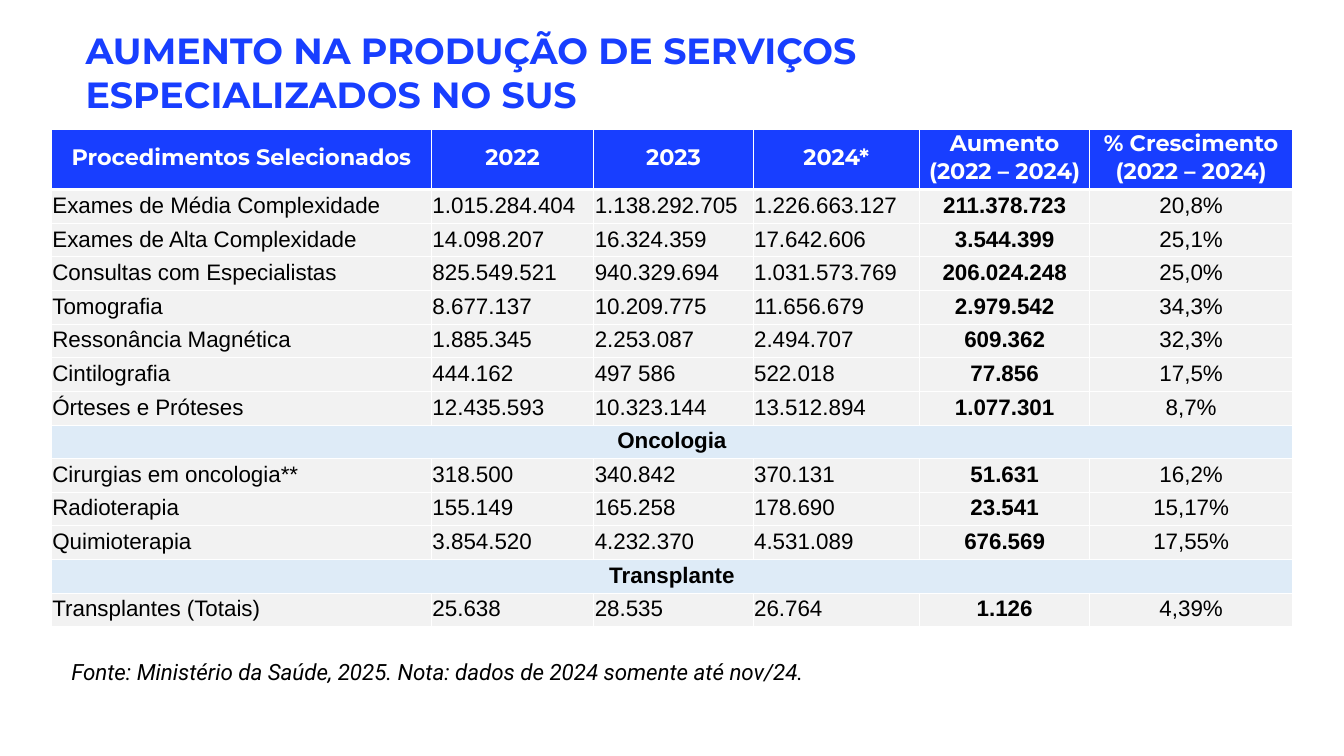
from lxml import etree
from pptx import Presentation
from pptx.dml.color import RGBColor
from pptx.enum.text import MSO_ANCHOR, MSO_AUTO_SIZE, PP_ALIGN
from pptx.oxml.ns import qn
from pptx.util import Pt

LEFT, CENTER = PP_ALIGN.LEFT, PP_ALIGN.CENTER
MIDDLE = MSO_ANCHOR.MIDDLE
GROW = MSO_AUTO_SIZE.SHAPE_TO_FIT_TEXT
NO_FIT = MSO_AUTO_SIZE.NONE

EMU_PER_PX = 9144  # 100 px to the inch
COLORS = {"blue": "183EFF", "row": "F2F2F2", "section": "DEEBF7",
          "white": "FFFFFF", "black": "000000"}

COLUMN_WIDTHS = [377, 161, 158, 165, 169, 201]
HEADER_HEIGHT = 60
INCREASE_COLUMN = 4
HEADER = ["Procedimentos Selecionados", "2022", "2023", "2024*",
          "Aumento\n(2022 – 2024)", "% Crescimento\n(2022 – 2024)"]
# A row with a single entry is a section heading across the table
PROCEDURES = [
    ["Exames de Média Complexidade", "1.015.284.404", "1.138.292.705",
     "1.226.663.127", "211.378.723", "20,8%"],
    ["Exames de Alta Complexidade", "14.098.207", "16.324.359", "17.642.606", "3.544.399", "25,1%"],
    ["Consultas com Especialistas", "825.549.521", "940.329.694",
     "1.031.573.769", "206.024.248", "25,0%"],
    ["Tomografia", "8.677.137", "10.209.775", "11.656.679", "2.979.542", "34,3%"],
    ["Ressonância Magnética", "1.885.345", "2.253.087", "2.494.707", "609.362", "32,3%"],
    ["Cintilografia", "444.162", "497 586", "522.018", "77.856", "17,5%"],
    ["Órteses e Próteses", "12.435.593", "10.323.144", "13.512.894", "1.077.301", "8,7%"],
    ["Oncologia"],
    ["Cirurgias em oncologia**", "318.500", "340.842", "370.131", "51.631", "16,2%"],
    ["Radioterapia", "155.149", "165.258", "178.690", "23.541", "15,17%"],
    ["Quimioterapia", "3.854.520", "4.232.370", "4.531.089", "676.569", "17,55%"],
    ["Transplante"],
    ["Transplantes (Totais)", "25.638", "28.535", "26.764", "1.126", "4,39%"],
]


def px(length):
    return round(length * EMU_PER_PX)


def rgb(name):
    return RGBColor.from_string(COLORS[name])


def set_font(paragraph, family, size, color, bold=False, italic=False):
    font = paragraph.font
    font.name, font.size = family, Pt(size)
    font.bold, font.italic = bold, italic
    font.color.rgb = rgb(color)


def add_text(slide, box, text, auto_size, **font):
    text_frame = slide.shapes.add_textbox(*map(px, box)).text_frame
    text_frame.word_wrap = True
    text_frame.auto_size = auto_size
    text_frame.text = text
    set_font(text_frame.paragraphs[0], **font)


def add_title(slide, box):
    add_text(slide, box, "AUMENTO NA PRODUÇÃO DE SERVIÇOS ESPECIALIZADOS NO SUS", NO_FIT,
             family="Montserrat", size=26, color="blue", bold=True)


def add_source_note(slide, box):
    add_text(slide, box,
             "Fonte: Ministério da Saúde, 2025. Nota: dados de 2024 somente até nov/24.", GROW,
             family="Roboto", size=16, color="black", italic=True)


def set_borders(cell, widths):
    properties = cell._tc.get_or_add_tcPr()
    for side, width in zip("LRTB", widths):
        line = etree.SubElement(properties, qn(f"a:ln{side}"), w=str(Pt(width)))
        fill = etree.SubElement(line, qn("a:solidFill"))
        etree.SubElement(fill, qn("a:srgbClr"), val=COLORS["white"])


def style_cell(cell, text, fill, align, borders, **font):
    set_borders(cell, borders)
    cell.fill.solid()
    cell.fill.fore_color.rgb = rgb(fill)
    cell.vertical_anchor = MIDDLE
    cell.margin_left = cell.margin_right = cell.margin_top = px(1)
    cell.margin_bottom = px(5)
    cell.text = text
    for paragraph in cell.text_frame.paragraphs:
        paragraph.alignment = align
        paragraph.line_spacing = Pt(19.5)
        set_font(paragraph, size=16, **font)


def add_procedures_table(slide, box):
    rows = [HEADER] + PROCEDURES
    table = slide.shapes.add_table(len(rows), len(HEADER), *map(px, box)).table
    table.horz_banding = False
    for column, width in zip(table.columns, COLUMN_WIDTHS):
        column.width = px(width)
    body_height = (box[3] - HEADER_HEIGHT) / len(PROCEDURES)

    for r, entries in enumerate(rows):
        table.rows[r].height = px(body_height if r else HEADER_HEIGHT)
        is_section = len(entries) == 1
        if is_section:
            table.cell(r, 0).merge(table.cell(r, len(HEADER) - 1))
        # The line between header and body is heavier
        borders = (0.75, 0.75, 2.22 if r == 1 else 0.75, 2.22 if r == 0 else 0.75)
        for c, text in enumerate(entries):
            cell = table.cell(r, c)
            if r == 0:
                style_cell(cell, text, "blue", CENTER, borders,
                           family="Montserrat", color="white", bold=True)
            else:
                style_cell(cell, text, "section" if is_section else "row",
                           CENTER if is_section or c >= INCREASE_COLUMN else LEFT, borders,
                           family="Arial", color="black",
                           bold=is_section or c == INCREASE_COLUMN)


def main():
    presentation = Presentation()
    presentation.slide_width, presentation.slide_height = px(1333), px(750)
    slide = presentation.slides.add_slide(presentation.slide_layouts[6])
    add_title(slide, (75, 23, 974, 96))
    add_source_note(slide, (61, 648, 790, 37))
    add_procedures_table(slide, (51, 128, sum(COLUMN_WIDTHS), 494))
    presentation.save("out.pptx")


if __name__ == "__main__":
    main()
